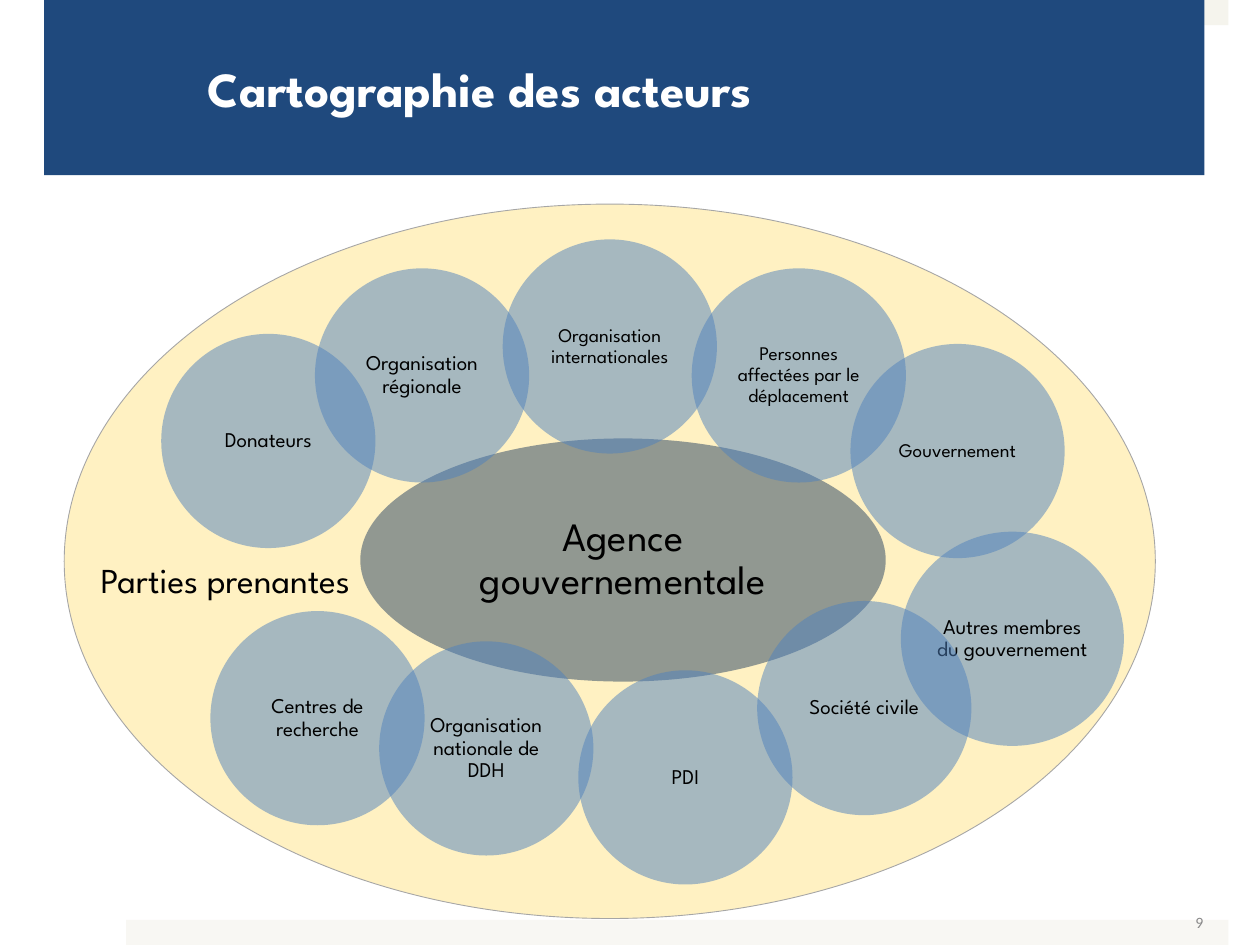
from dataclasses import dataclass

from lxml.etree import SubElement
from pptx import Presentation
from pptx.dml.color import RGBColor as RGB
from pptx.enum.shapes import MSO_SHAPE as Shape
from pptx.enum.text import MSO_ANCHOR as Anchor, MSO_AUTO_SIZE as AutoSize, PP_ALIGN as Align
from pptx.oxml.ns import qn
from pptx.util import Inches, Pt


@dataclass(frozen=True)
class Theme:
    font: str = "League Spartan"
    number_font: str = "Calibri"
    navy: str = "1F497D"
    hub: str = "254061"
    actor: str = "4F81BD"
    field: str = "FFF1C2"
    outline: str = "A6A6A6"
    top_strip: str = "F5F4ED"
    bottom_strip: str = "F8F7F3"
    white: str = "FFFFFF"
    black: str = "000000"
    grey: str = "898989"
    title_size: int = 28
    hub_size: int = 23
    caption_size: int = 20
    actor_size: int = 12
    small_size: int = 11
    number_size: int = 9


@dataclass(frozen=True)
class Box:
    left: float
    top: float
    width: float
    height: float

    def emu(self) -> tuple:
        return tuple(Inches(v) for v in (self.left, self.top, self.width, self.height))


@dataclass(frozen=True)
class Actor:
    name: str
    left: float
    top: float
    size: int
    width: float = 1.7
    height: float = 1.7


T = Theme()

# Back to front: later circles overlap earlier ones
ACTORS = [
    Actor("Organisation internationales", 3.99, 1.9, T.small_size),
    Actor("Personnes affectées par le déplacement", 5.49, 2.13, T.small_size),
    Actor("Gouvernement", 6.75, 2.73, T.small_size),
    Actor("Autres membres du gouvernement", 7.15, 4.22, T.actor_size, width=1.77),
    Actor("Société civile", 6.01, 4.77, T.actor_size),
    Actor("PDI", 4.59, 5.32, T.actor_size),
    Actor("Organisation nationale de DDH", 3.01, 5.09, T.actor_size),
    Actor("Centres de recherche", 1.67, 4.85, T.actor_size),
    Actor("Donateurs", 1.28, 2.65, T.actor_size),
    Actor("Organisation régionale", 2.5, 2.13, T.actor_size),
]


def add_filled(shapes, kind: Shape, box: Box, color: str):
    sp = shapes.add_shape(kind, *box.emu())
    sp.shadow.inherit = False
    sp.fill.solid()
    sp.fill.fore_color.rgb = RGB.from_string(color)
    sp.line.fill.background()
    return sp


def write(sp, text: str, size: int, color: str, align=Align.LEFT, anchor=Anchor.MIDDLE,
          insets=(0.1, 0.05, 0.1, 0.05), font: str = T.font, bold: bool = False):
    tf = sp.text_frame
    tf.word_wrap = True
    tf.auto_size = AutoSize.NONE
    tf.vertical_anchor = anchor
    tf.margin_left, tf.margin_top, tf.margin_right, tf.margin_bottom = map(Inches, insets)
    p = tf.paragraphs[0]
    p.alignment = align
    r = p.add_run()
    r.text = text
    r.font.name, r.font.size, r.font.bold = font, Pt(size), bold
    r.font.color.rgb = RGB.from_string(color)
    return p


def add_bubble(shapes, box: Box, color: str, text: str, size: int, inset: float) -> None:
    """Half-transparent ellipse with a centred label."""
    sp = add_filled(shapes, Shape.OVAL, box, color)
    rgb = sp._element.spPr.find(qn("a:solidFill"))[0]
    SubElement(rgb, qn("a:alpha")).set("val", "50000")
    p = write(sp, text, size, T.black, Align.CENTER, insets=(inset,) * 4)
    p.line_spacing = 0.9


def main() -> None:
    prs = Presentation()
    prs.slide_width, prs.slide_height = Inches(10), Inches(7.5)
    s = prs.slides.add_slide(prs.slide_layouts[5])
    title = s.shapes.title

    # Edge strips and page number
    add_filled(s.shapes, Shape.RECTANGLE, Box(1, 0, 8.75, 0.2), T.top_strip)
    add_filled(s.shapes, Shape.RECTANGLE, Box(1, 7.3, 8.75, 0.2), T.bottom_strip)
    number = s.shapes.add_textbox(*Box(7.29, 7.12, 2.33, 0.4).emu())
    write(number, "9", T.number_size, T.grey, Align.RIGHT,
          insets=(0.07, 0.04, 0.07, 0.04), font=T.number_font)

    # Stakeholder field
    field = add_filled(s.shapes, Shape.OVAL, Box(0.51, 1.62, 8.66, 5.67), T.field)
    field.line.color.rgb = RGB.from_string(T.outline)
    field.line.width = Pt(0.5)

    # Title band, brought in front of the strips
    s.shapes._spTree.append(title._element)
    title.left, title.top, title.width, title.height = Box(0.35, 0, 9.21, 1.39).emu()
    title.fill.solid()
    title.fill.fore_color.rgb = RGB.from_string(T.navy)
    write(title, "Cartographie des acteurs", T.title_size, T.white,
          insets=(1.3, 0.05, 0.3, 0.05), bold=True)

    # Central agency and the ring of actors
    ring = s.shapes.add_group_shape().shapes
    add_bubble(ring, Box(2.86, 3.48, 4.17, 1.93), T.hub, "Agence gouvernementale", T.hub_size, 0.03)
    for a in ACTORS:
        add_bubble(ring, Box(a.left, a.top, a.width, a.height), T.actor, a.name, a.size, 0.02)

    # Field caption
    caption = s.shapes.add_textbox(*Box(0.7, 4.38, 2.54, 0.44).emu())
    write(caption, "Parties prenantes", T.caption_size, T.black, anchor=Anchor.TOP)

    prs.save("out.pptx")


if __name__ == "__main__":
    main()
